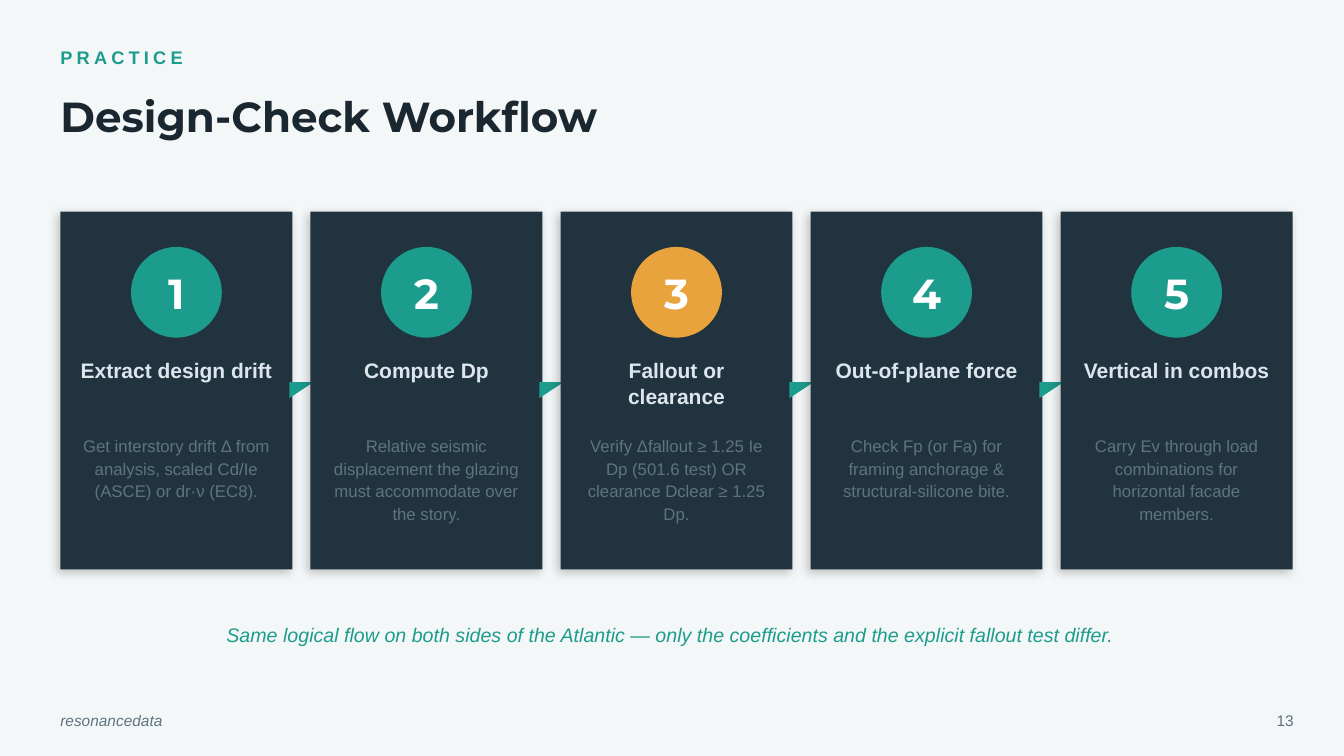
from lxml import etree
from pptx import Presentation
from pptx.dml.color import RGBColor
from pptx.enum.shapes import MSO_SHAPE
from pptx.enum.text import MSO_ANCHOR, MSO_AUTO_SIZE, PP_ALIGN
from pptx.oxml.ns import qn
from pptx.util import Emu, Pt

PX = 9144  # EMU per px, 100 px to the inch
TITLE_ONLY = 5
RECT, OVAL, TRIANGLE = MSO_SHAPE.RECTANGLE, MSO_SHAPE.OVAL, MSO_SHAPE.RIGHT_TRIANGLE
LEFT, CENTER, RIGHT = PP_ALIGN.LEFT, PP_ALIGN.CENTER, PP_ALIGN.RIGHT
TOP, MIDDLE = MSO_ANCHOR.TOP, MSO_ANCHOR.MIDDLE

BODY_FONT, HEADING_FONT = "Arial", "Montserrat"
BACKGROUND, INK, CARD = "F4F7F8", "1A2730", "21333F"
TEAL, AMBER, WHITE = "1C9C8C", "E8A33D", "FFFFFF"
PALE, MUTED = "DCE6EC", "5E7382"

CARD_LEFT, CARD_TOP, CARD_WIDTH, CARD_HEIGHT = 60, 210, 230, 355
CARD_PITCH = 248
BADGE = 90
CARD_PADDING = 18

STEPS = [
    ("Extract design drift", TEAL,
     "Get interstory drift Δ from analysis, scaled Cd/Ie (ASCE) or dr·ν (EC8)."),
    ("Compute Dp", TEAL,
     "Relative seismic displacement the glazing must accommodate over the story."),
    ("Fallout or clearance", AMBER,
     "Verify Δfallout ≥ 1.25 Ie Dp (501.6 test) OR clearance Dclear ≥ 1.25 Dp."),
    ("Out-of-plane force", TEAL,
     "Check Fp (or Fa) for framing anchorage & structural-silicone bite."),
    ("Vertical in combos", TEAL,
     "Carry Ev through load combinations for horizontal facade members."),
]


def px(*lengths):
    return [Emu(length * PX) for length in lengths]


def rgb(hex_color):
    return RGBColor.from_string(hex_color)


def write(shape, text, size, color, font=BODY_FONT, bold=False, italic=False,
          align=LEFT, anchor=MIDDLE, inset=(0, 0), line_spacing=None):
    """Put one formatted paragraph into a shape and return its run."""
    frame = shape.text_frame
    frame.text = text
    frame.word_wrap = True
    frame.auto_size = MSO_AUTO_SIZE.NONE
    frame.vertical_anchor = anchor
    across, down = px(*inset)
    frame.margin_left = frame.margin_right = across
    frame.margin_top = frame.margin_bottom = down
    paragraph = frame.paragraphs[0]
    paragraph.alignment = align
    if line_spacing:
        paragraph.line_spacing = line_spacing
    run = paragraph.runs[0]
    run.font.name = font
    run.font.size = Pt(size)
    run.font.bold = bold
    run.font.italic = italic
    run.font.color.rgb = rgb(color)
    return run


def add_text(slide, box, text, size, color, **style):
    return write(slide.shapes.add_textbox(*px(*box)), text, size, color, **style)


def add_filled(slide, preset, box, color):
    shape = slide.shapes.add_shape(preset, *px(*box))
    shape.shadow.inherit = False
    shape.fill.solid()
    shape.fill.fore_color.rgb = rgb(color)
    shape.line.fill.background()
    return shape


def add_soft_shadow(shape):
    effects = shape._element.spPr.find(qn("a:effectLst"))
    shadow = etree.SubElement(effects, qn("a:outerShdw"), blurRad=str(Pt(7)),
                              dist=str(Pt(3)), dir=str(135 * 60000),
                              algn="bl", rotWithShape="0")
    black = etree.SubElement(shadow, qn("a:srgbClr"), val="000000")
    etree.SubElement(black, qn("a:alpha"), val="22000")


def add_step(slide, number, left, heading, badge_color, detail):
    card = add_filled(slide, RECT, (left, CARD_TOP, CARD_WIDTH, CARD_HEIGHT), CARD)
    add_soft_shadow(card)
    badge_left = left + (CARD_WIDTH - BADGE) // 2
    badge = add_filled(slide, OVAL, (badge_left, CARD_TOP + 35, BADGE, BADGE),
                       badge_color)
    write(badge, str(number), 30, WHITE, font=HEADING_FONT, bold=True, align=CENTER)
    text_left, text_width = left + CARD_PADDING, CARD_WIDTH - 2 * CARD_PADDING
    add_text(slide, (text_left, 355, text_width, 75), heading, 15, PALE,
             bold=True, align=CENTER, anchor=TOP)
    add_text(slide, (text_left, 430, text_width, 125), detail, 12, MUTED,
             align=CENTER, anchor=TOP, line_spacing=1.12)


def add_step_pointer(slide, card_right):
    pointer = add_filled(slide, TRIANGLE, (card_right + 1, 375, 16, 24), TEAL)
    pointer.rotation = 90


def main():
    deck = Presentation()
    deck.slide_width, deck.slide_height = px(1333, 750)
    slide = deck.slides.add_slide(deck.slide_layouts[TITLE_ONLY])
    slide.background.fill.solid()
    slide.background.fill.fore_color.rgb = rgb(BACKGROUND)

    section = add_text(slide, (60, 42, 1100, 30), "PRACTICE", 13, TEAL, bold=True)
    section.font._element.set("spc", "300")
    title = slide.shapes.title
    title.left, title.top, title.width, title.height = px(60, 72, 1210, 85)
    write(title, "Design-Check Workflow", 30, INK, font=HEADING_FONT, bold=True)

    for index, (heading, badge_color, detail) in enumerate(STEPS):
        left = CARD_LEFT + index * CARD_PITCH
        add_step(slide, index + 1, left, heading, badge_color, detail)
        if index < len(STEPS) - 1:
            add_step_pointer(slide, left + CARD_WIDTH)

    add_text(slide, (60, 605, 1210, 50),
             "Same logical flow on both sides of the Atlantic — only the "
             "coefficients and the explicit fallout test differ.",
             14, TEAL, italic=True, align=CENTER)
    add_text(slide, (1243, 700, 50, 30), "13", 11, MUTED, align=RIGHT, inset=(10, 5))
    add_text(slide, (50, 700, 300, 30), "resonancedata", 11, MUTED, italic=True,
             inset=(10, 5))
    deck.save("out.pptx")


if __name__ == "__main__":
    main()
